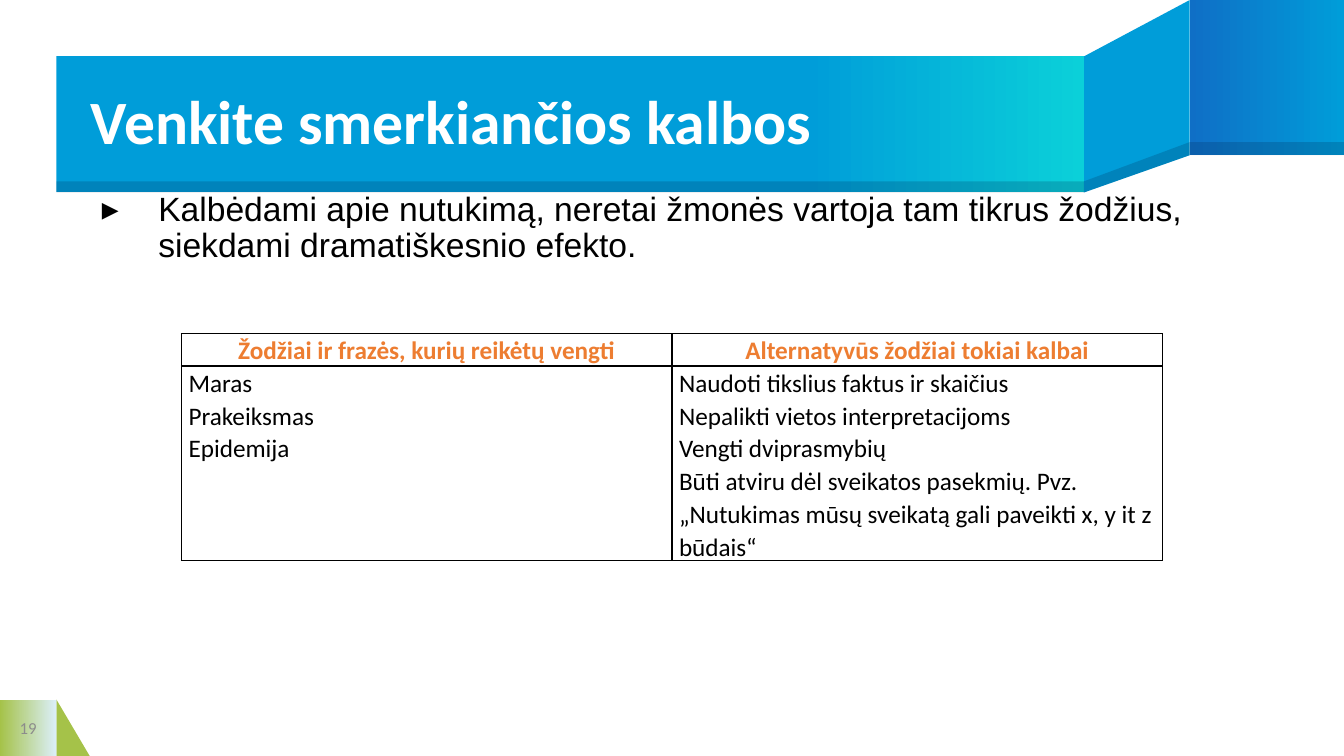
from copy import deepcopy

from lxml import etree
from pptx import Presentation
from pptx.dml.color import RGBColor
from pptx.enum.shapes import MSO_SHAPE
from pptx.enum.text import MSO_ANCHOR, PP_ALIGN
from pptx.oxml.ns import qn
from pptx.util import Inches, Pt

RECTANGLE, TRIANGLE = MSO_SHAPE.RECTANGLE, MSO_SHAPE.RIGHT_TRIANGLE
TOP, MIDDLE = MSO_ANCHOR.TOP, MSO_ANCHOR.MIDDLE
LEFT, CENTER = PP_ALIGN.LEFT, PP_ALIGN.CENTER
SLIDE_WIDTH, SLIDE_HEIGHT = 13.33, 7.5
BLUE, DEEP_BLUE, CYAN, NAVY = "009DD9", "0F6FC6", "0BD0D9", "001F46"
GREEN, PALE_BLUE = "A5C249", "DBEFF9"
BLACK, WHITE, GREY, ORANGE = "000000", "FFFFFF", "8C8C8C", "ED7D31"

HEADERS = ["Žodžiai ir frazės, kurių reikėtų vengti",
           "Alternatyvūs žodžiai tokiai kalbai"]
PHRASES = [
    ["Maras", "Prakeiksmas", "Epidemija"],
    ["Naudoti tikslius faktus ir skaičius",
     "Nepalikti vietos interpretacijoms",
     "Vengti dviprasmybių",
     "Būti atviru dėl sveikatos pasekmių. Pvz. „Nutukimas mūsų sveikatą "
     "gali paveikti x, y it z būdais“"],
]


def color(value):
    return RGBColor.from_string(value)


def paint(shape, fill, alpha=None):
    """Fill with one colour, or with a list of (percent, colour) stops."""
    shape.shadow.inherit = False
    shape.line.fill.background()
    if isinstance(fill, str):
        shape.fill.solid()
        shape.fill.fore_color.rgb = color(fill)
        if alpha is not None:
            tint = next(shape._element.spPr.iter(qn("a:srgbClr")))
            etree.SubElement(tint, qn("a:alpha"), val=str(alpha * 1000))
        return
    shape.fill.gradient()
    shape.fill.gradient_angle = 0
    stop_list = next(shape._element.spPr.iter(qn("a:gsLst")))
    for _ in fill[2:]:
        stop_list.append(deepcopy(stop_list[0]))
    for stop, (percent, value) in zip(shape.fill.gradient_stops, fill):
        stop.position = percent / 100
        stop.color.rgb = color(value)


def add_block(page, kind, box, fill, alpha=None):
    shape = page.shapes.add_shape(kind, *map(Inches, box))
    paint(shape, fill, alpha)
    return shape


def add_outline(page, points, fill, alpha=None):
    corners = [(Inches(x), Inches(y)) for x, y in points]
    builder = page.shapes.build_freeform(*corners[0])
    builder.add_line_segments(corners[1:], close=True)
    paint(builder.convert_to_shape(), fill, alpha)


def prepare_frame(frame, anchor):
    frame.word_wrap = True
    frame.vertical_anchor = anchor
    frame.margin_left = frame.margin_right = 0
    frame.margin_top = frame.margin_bottom = 0


def style(para, size, value, font="Calibri", bold=False, align=LEFT, spacing=1.0):
    para.alignment = align
    para.line_spacing = spacing
    para.space_before = Pt(0)
    para.font.name = font
    para.font.size = Pt(size)
    para.font.bold = bold
    para.font.color.rgb = color(value)


def add_ribbon(page, box):
    """Title band, its fold and the wing that reaches the slide's edge."""
    left, top, width, height = box
    fold, bottom = left + width, top + height
    wing, wing_bottom = fold + 1.05, 1.54
    wing_width = SLIDE_WIDTH - wing
    edge, wing_edge = 0.11, 0.13

    add_outline(page, [(wing, 0), (fold, top), (fold, bottom), (wing, wing_bottom)], BLUE)
    add_block(page, RECTANGLE, (wing, 0, wing_width, wing_bottom),
              [(0, DEEP_BLUE), (100, BLUE)])
    add_block(page, RECTANGLE, box, [(0, BLUE), (73, BLUE), (100, CYAN)])
    # Shaded lower edges
    add_outline(page, [(wing, wing_bottom - wing_edge), (fold, bottom - edge),
                       (fold, bottom), (wing, wing_bottom)], NAVY, 20)
    add_block(page, RECTANGLE, (wing, wing_bottom - wing_edge, wing_width, wing_edge), NAVY, 20)
    add_block(page, RECTANGLE, (left, bottom - edge, width, edge), NAVY, 20)


def place_title(page, box, text):
    title = page.shapes.title
    title.left, title.top, title.width, title.height = map(Inches, box)
    page.shapes._spTree.append(title._element)  # bring in front of the ribbon
    prepare_frame(title.text_frame, MIDDLE)
    title.text_frame.text = text
    style(title.text_frame.paragraphs[0], 44, WHITE, bold=True, spacing=0.9)


def add_body(page, box, text):
    frame = page.shapes.add_textbox(*map(Inches, box)).text_frame
    prepare_frame(frame, TOP)
    para = frame.paragraphs[0]
    para.text = text
    settings = para._p.get_or_add_pPr()
    settings.set("marL", str(Inches(0.67)))
    settings.set("indent", str(Inches(-0.56)))
    etree.SubElement(settings, qn("a:buFont"), typeface="Arial")
    etree.SubElement(settings, qn("a:buChar"), char="▸")
    style(para, 24, BLACK, font="Arial", spacing=0.9)


def add_borders(cell):
    settings = cell._tc.get_or_add_tcPr()
    for index, side in enumerate(("lnL", "lnR", "lnT", "lnB")):
        line = etree.Element(qn(f"a:{side}"), w=str(Pt(1)))
        fill = etree.SubElement(line, qn("a:solidFill"))
        etree.SubElement(fill, qn("a:srgbClr"), val=BLACK)
        settings.insert(index, line)


def fill_cell(cell, lines, value, bold, align):
    cell.margin_left = cell.margin_right = Inches(0.07)
    cell.margin_top = cell.margin_bottom = 0
    cell.fill.background()
    add_borders(cell)
    cell.text = "\n".join(lines)
    for para in cell.text_frame.paragraphs:
        style(para, 18, value, bold=bold, align=align, spacing=1.07)


def add_phrase_table(page, box):
    left, top, width, height = box
    table = page.shapes.add_table(2, len(HEADERS), *map(Inches, box)).table
    table.first_row = table.horz_banding = False
    header_height = 0.32
    table.rows[0].height = Inches(header_height)
    table.rows[1].height = Inches(height - header_height)
    for column, (header, phrases) in enumerate(zip(HEADERS, PHRASES)):
        table.columns[column].width = Inches(width / len(HEADERS))
        fill_cell(table.cell(0, column), [header], ORANGE, True, CENTER)
        fill_cell(table.cell(1, column), phrases, BLACK, False, LEFT)


def add_page_number(page, box, number):
    left, top, width, height = box
    add_block(page, TRIANGLE, (left + width, top, 0.33, height), GREEN)
    add_block(page, RECTANGLE, box, [(0, GREEN), (100, PALE_BLUE)])
    frame = page.shapes.add_textbox(*map(Inches, box)).text_frame
    prepare_frame(frame, MIDDLE)
    frame.text = number
    style(frame.paragraphs[0], 12, GREY, align=CENTER)


def main():
    deck = Presentation()
    deck.slide_width, deck.slide_height = Inches(SLIDE_WIDTH), Inches(SLIDE_HEIGHT)
    page = deck.slides.add_slide(deck.slide_layouts[5])
    add_ribbon(page, (0.56, 0.56, 10.19, 1.35))
    place_title(page, (0.9, 0.57, 9.85, 1.34), "Venkite smerkiančios kalbos")
    add_body(page, (0.9, 1.91, 11.54, 5.02),
             "Kalbėdami apie nutukimą, neretai žmonės vartoja tam tikrus žodžius, "
             "siekdami dramatiškesnio efekto.")
    add_phrase_table(page, (1.8, 3.31, 9.73, 2.22))
    add_page_number(page, (0, 6.94, 0.56, 0.56), "19")
    deck.save("out.pptx")


if __name__ == "__main__":
    main()
